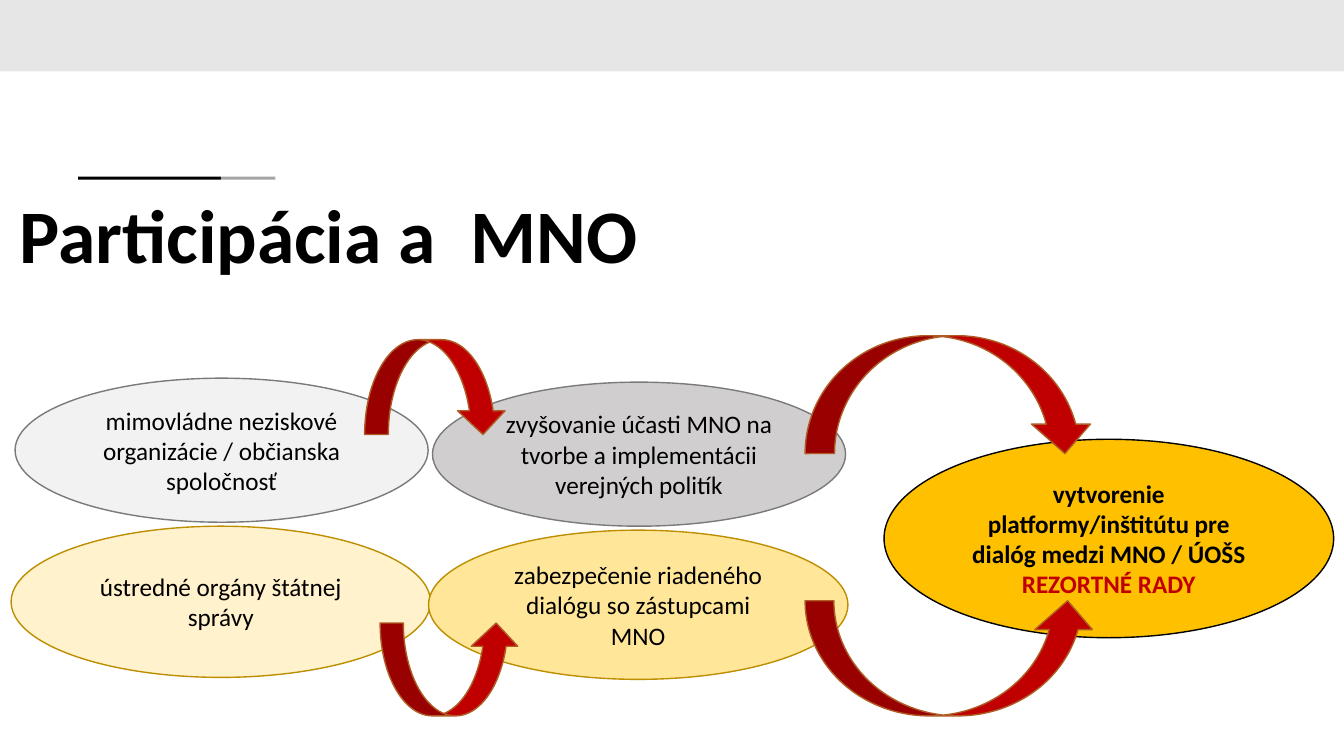
from pptx import Presentation
from pptx.dml.color import RGBColor
from pptx.enum.shapes import MSO_SHAPE as SHAPE
from pptx.enum.text import MSO_ANCHOR as ANCHOR, MSO_AUTO_SIZE as AUTO_SIZE, PP_ALIGN as ALIGN
from pptx.util import Cm, Pt

COLORS = {
    "black": "000000", "band": "E7E6E6", "accent": "A5A5A5",
    "light_grey": "F2F2F2", "grey": "D0CECE", "grey_edge": "7A7A7A",
    "cream": "FFF2CC", "yellow": "FFE699", "gold_edge": "BD8E00",
    "gold": "FFC000", "red": "C00000", "arrow_edge": "AF5C24",
}
WIDTH, HEIGHT = 33.87, 19.05


def rgb(name):
    return RGBColor.from_string(COLORS[name])


def write(paragraph, text, size=18, bold=False, color="black", align=ALIGN.CENTER, spacing=1.0):
    paragraph.alignment = align
    paragraph.line_spacing = spacing
    run = paragraph.add_run()
    run.text = text
    font = run.font
    font.name, font.size, font.bold = "Calibri", Pt(size), bold
    font.color.rgb = rgb(color)


def add_filled(slide, kind, box, fill, edge=None):
    shape = slide.shapes.add_shape(kind, *map(Cm, box))
    shape.shadow.inherit = False
    shape.fill.solid()
    shape.fill.fore_color.rgb = rgb(fill)
    if edge:
        shape.line.color.rgb = rgb(edge)
        shape.line.width = Pt(1)
    else:
        shape.line.fill.background()
    return shape


def add_header(slide, left, top, width, height):
    """Draw the top band and the two-tone rule under it."""
    add_filled(slide, SHAPE.RECTANGLE, (left, top, width, height), "band")
    rule_left = left + 1.97
    for length, color in ((3.6, "black"), (1.37, "accent")):
        add_filled(slide, SHAPE.RECTANGLE, (rule_left, top + 4.45, length, 0.08), color)
        rule_left += length


def add_title(slide, left, top, width, height):
    title = slide.shapes.title
    title.left, title.top, title.width, title.height = map(Cm, (left, top, width, height))
    frame = title.text_frame
    frame.auto_size = AUTO_SIZE.NONE
    frame.word_wrap = True
    frame.vertical_anchor = ANCHOR.TOP
    frame.margin_left = Cm(0.74)
    frame.margin_top = frame.margin_right = frame.margin_bottom = Cm(0.33)
    write(frame.paragraphs[0], "Participácia a  MNO", size=54, bold=True,
          align=ALIGN.LEFT, spacing=0.9)


def add_bubble(slide, box, fill, edge, text, bold=False, highlight=None):
    frame = add_filled(slide, SHAPE.OVAL, box, fill, edge).text_frame
    frame.word_wrap = True
    frame.vertical_anchor = ANCHOR.MIDDLE
    write(frame.paragraphs[0], text, bold=bold)
    if highlight:
        write(frame.add_paragraph(), highlight, bold=bold, color="red")


def add_participation_flow(slide, left, top):
    """Draw the bubbles, then the arrows that link them."""
    def placed(x, y, width, height):
        return left + x, top + y, width, height

    bubbles = (
        ((0.1, 1.07, 10.41, 3.63), "light_grey", "grey_edge",
         "mimovládne neziskové organizácie / občianska spoločnosť"),
        ((10.62, 1.17, 10.41, 3.63), "grey", "grey_edge",
         "zvyšovanie účasti MNO na tvorbe a implementácii verejných politík"),
        ((0, 4.8, 10.57, 3.81), "cream", "gold_edge", "ústredné orgány štátnej správy"),
        ((10.52, 4.9, 10.57, 3.76), "yellow", "gold_edge",
         "zabezpečenie riadeného dialógu so zástupcami MNO"),
    )
    for box, fill, edge, text in bubbles:
        add_bubble(slide, placed(*box), fill, edge, text)
    add_bubble(slide, placed(22, 2.61, 11.33, 5), "gold", "black",
               "vytvorenie platformy/inštitútu pre dialóg medzi MNO / ÚOŠS",
               bold=True, highlight="REZORTNÉ RADY")

    arrows = (
        (SHAPE.CURVED_DOWN_ARROW, (8.91, 0.1, 3.58, 2.39)),
        (SHAPE.CURVED_UP_ARROW, (9.3, 7.24, 3.51, 2.34)),
        (SHAPE.CURVED_DOWN_ARROW, (20.01, 0, 7.29, 2.97)),
        (SHAPE.CURVED_UP_ARROW, (20.01, 6.68, 7.34, 2.9)),
    )
    for kind, box in arrows:
        add_filled(slide, kind, placed(*box), "red", "arrow_edge")


def main():
    deck = Presentation()
    deck.slide_width, deck.slide_height = Cm(WIDTH), Cm(HEIGHT)
    slide = deck.slides.add_slide(deck.slide_layouts[5])
    add_header(slide, 0, 0, WIDTH, 1.8)
    add_title(slide, -0.25, 4.67, 29.46, 3.2)
    add_participation_flow(slide, 0.28, 8.46)
    deck.save("out.pptx")


if __name__ == "__main__":
    main()
